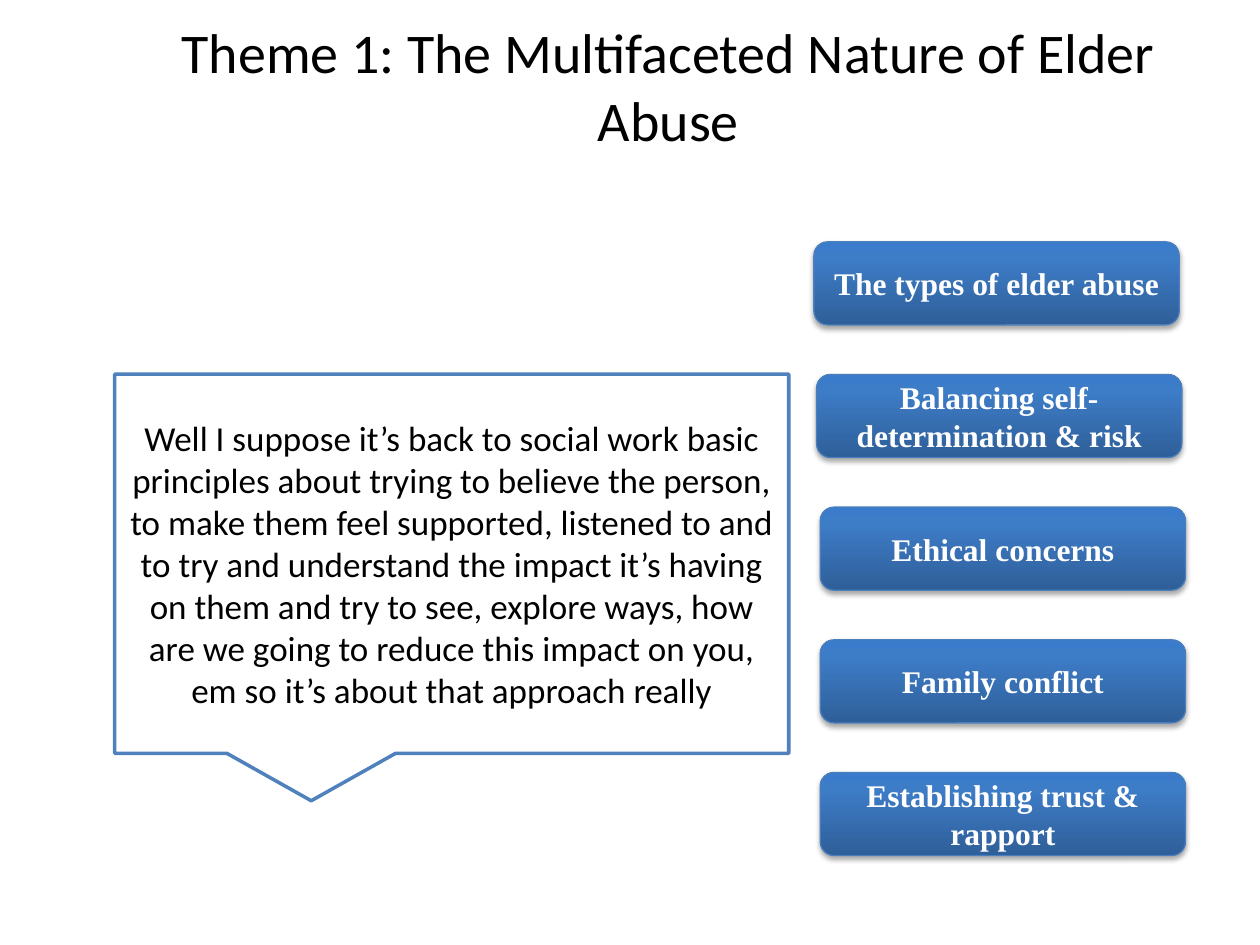
from lxml.etree import SubElement
from pptx import Presentation
from pptx.dml.color import RGBColor
from pptx.enum.shapes import MSO_SHAPE as Shape
from pptx.enum.text import MSO_ANCHOR as Anchor, PP_ALIGN as Align
from pptx.oxml.ns import qn
from pptx.util import Pt

TITLE = "Theme 1: The Multifaceted Nature of Elder Abuse"
QUOTE = (
    "Well I suppose it’s back to social work basic principles about trying to "
    "believe the person, to make them feel supported, listened to and to try and "
    "understand the impact it’s having on them and try to see, explore ways, how "
    "are we going to reduce this impact on you, em so it’s about that approach really"
)
# Each topic with the left edge of its button
TOPICS = [
    ("The types of elder abuse", 465.1),
    ("Balancing self-determination & risk", 466.6),
    ("Ethical concerns", 468.7),
    ("Family conflict", 468.7),
    ("Establishing trust & rapport", 468.7),
]
TOPIC_TOP, TOPIC_STEP = 138.2, 75.8
TOPIC_STOPS = [(0, "2F5F99"), (80, "3D7CC7"), (100, "3A7CCB")]


def rgb(value):
    return RGBColor.from_string(value)


def write(shape, text, size=18, font="Calibri", color="000000", bold=False):
    frame = shape.text_frame
    frame.word_wrap = True
    frame.vertical_anchor = Anchor.MIDDLE
    para = frame.paragraphs[0]
    para.alignment = Align.CENTER
    span = para.add_run()
    span.text = text
    span.font.size = Pt(size)
    span.font.name = font
    span.font.bold = bold
    span.font.color.rgb = rgb(color)


def add_box(slide, kind, left, top, width, height, line, weight):
    box = slide.shapes.add_shape(kind, Pt(left), Pt(top), Pt(width), Pt(height))
    box.shadow.inherit = False
    box.line.color.rgb = rgb(line)
    box.line.width = Pt(weight)
    return box


def add_color(parent, value):
    return SubElement(parent, qn("a:srgbClr"), val=value)


def fill_gradient(box, stops):
    """Run the stops, given as (percent, colour), from bottom to top."""
    box.fill.gradient()
    box.fill.gradient_angle = 90
    stop_list = box.element.spPr.find(".//" + qn("a:gsLst"))
    for stop in list(stop_list):
        stop_list.remove(stop)
    for percent, color in stops:
        add_color(SubElement(stop_list, qn("a:gs"), pos=str(percent * 1000)), color)


def add_drop_shadow(box, blur=3.1, distance=1.8, opacity=35):
    effects = box.element.spPr.find(qn("a:effectLst"))
    shadow = SubElement(
        effects, qn("a:outerShdw"), blurRad=str(Pt(blur)), dist=str(Pt(distance)),
        dir="5400000", rotWithShape="0",
    )
    SubElement(add_color(shadow, "000000"), qn("a:alpha"), val=str(opacity * 1000))


def add_title(slide, text):
    title = slide.shapes.title
    title.left, title.top, title.width, title.height = map(Pt, (64.1, 3.6, 635.8, 90))
    write(title, text, size=32)


def add_topic(slide, text, left, top):
    button = add_box(slide, Shape.ROUNDED_RECTANGLE, left, top, 208.8, 47.5, "4B7EBC", 0.75)
    fill_gradient(button, TOPIC_STOPS)
    add_drop_shadow(button)
    write(button, text, font="Times New Roman", color="FFFFFF", bold=True)


def add_quote(slide, text):
    callout = add_box(
        slide, Shape.RECTANGULAR_CALLOUT, 65.5, 213.8, 385.2, 216.7, "4F81BD", 2
    )
    callout.fill.solid()
    callout.fill.fore_color.rgb = rgb("FFFFFF")
    write(callout, text, size=20)


def main():
    deck = Presentation()
    deck.slide_width, deck.slide_height = Pt(720), Pt(540)
    slide = deck.slides.add_slide(deck.slide_layouts[5])
    add_title(slide, TITLE)
    for row, (text, left) in enumerate(TOPICS):
        add_topic(slide, text, left, TOPIC_TOP + row * TOPIC_STEP)
    add_quote(slide, QUOTE)
    deck.save("out.pptx")


if __name__ == "__main__":
    main()
